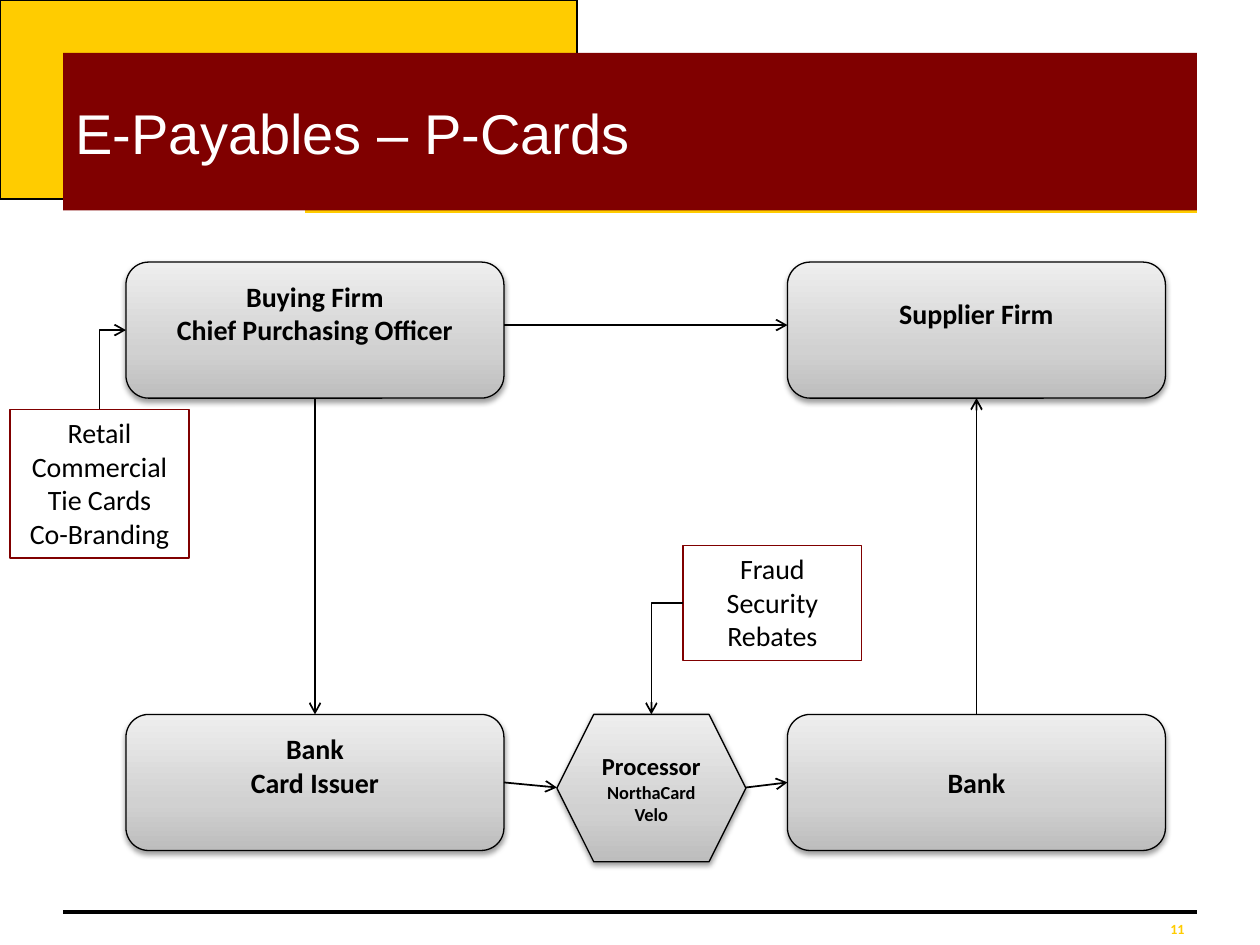
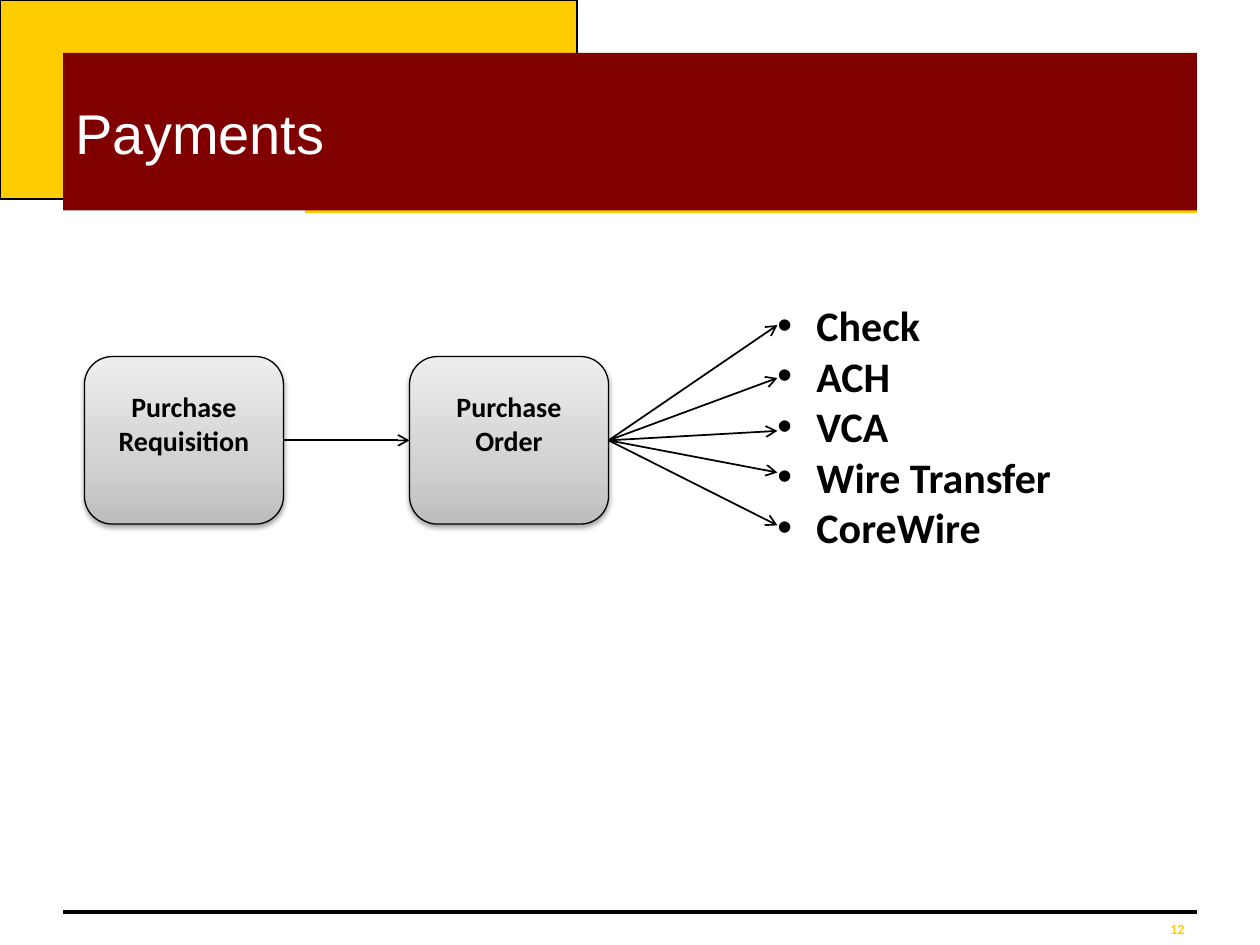
from lxml import etree
from pptx import Presentation
from pptx.dml.color import RGBColor
from pptx.enum.shapes import MSO_CONNECTOR, MSO_SHAPE
from pptx.enum.text import MSO_ANCHOR, MSO_AUTO_SIZE, PP_ALIGN
from pptx.oxml.ns import qn
from pptx.util import Inches, Pt

STRAIGHT, ELBOW = MSO_CONNECTOR.STRAIGHT, MSO_CONNECTOR.ELBOW
RECTANGLE, HEXAGON = MSO_SHAPE.RECTANGLE, MSO_SHAPE.HEXAGON
ROUNDED = MSO_SHAPE.ROUNDED_RECTANGLE
MIDDLE = MSO_ANCHOR.MIDDLE
NO_AUTOFIT = MSO_AUTO_SIZE.NONE
LEFT, CENTER, RIGHT = PP_ALIGN.LEFT, PP_ALIGN.CENTER, PP_ALIGN.RIGHT
TOP_SIDE, LEFT_SIDE, BOTTOM_SIDE, RIGHT_SIDE = range(4)

GOLD, MAROON, BLACK, WHITE = "FFCC00", "800000", "000000", "FFFFFF"
GRAY_STOPS = [(0, "BDBDBD"), (35, "D1D1D1"), (100, "EEEEEE")]
HEADING_FONT, BODY_FONT = "Arial", "Calibri"
TITLE_ONLY_LAYOUT, TITLE_AND_BODY_LAYOUT = 5, 1


def color(value):
    return RGBColor.from_string(value)


def place(shape, left, top, width, height):
    shape.left, shape.top = Inches(left), Inches(top)
    shape.width, shape.height = Inches(width), Inches(height)


def set_line(shape, line_color, width):
    shape.line.color.rgb = color(line_color)
    shape.line.width = Pt(width)


def write(paragraph, text, size, font=BODY_FONT, text_color=BLACK, bold=False,
          alignment=CENTER):
    paragraph.alignment = alignment
    run = paragraph.add_run()
    run.text = text
    run.font.name = font
    run.font.size = Pt(size)
    run.font.bold = bold
    run.font.color.rgb = color(text_color)


def write_lines(frame, lines, bold):
    frame.word_wrap = True
    for index, (text, size) in enumerate(lines):
        paragraph = frame.add_paragraph() if index else frame.paragraphs[0]
        write(paragraph, text, size, bold=bold)


def add_line(slide, start, end, line_color=BLACK, width=1, kind=STRAIGHT):
    points = [Inches(value) for value in (*start, *end)]
    connector = slide.shapes.add_connector(kind, *points)
    set_line(connector, line_color, width)
    etree.SubElement(connector.element.spPr, qn("a:effectLst"))
    return connector


def add_arrow(slide, start, end, source=None, target=None, kind=STRAIGHT,
              arrow_end="a:tailEnd"):
    connector = add_line(slide, start, end, kind=kind)
    if source:
        connector.begin_connect(*source)
    if target:
        connector.end_connect(*target)
    if kind == ELBOW:
        geometry = connector.element.spPr.find(qn("a:prstGeom"))
        geometry.set("prst", "bentConnector2")
    line = connector.element.spPr.find(qn("a:ln"))
    etree.SubElement(line, qn(arrow_end), type="arrow")
    return connector


def set_gray_gradient(shape):
    shape.fill.gradient()
    shape.fill.gradient_angle = 90
    stops = next(shape.element.iter(qn("a:gsLst")))
    stops.clear()
    for position, stop_color in GRAY_STOPS:
        stop = etree.SubElement(stops, qn("a:gs"), pos=str(position * 1000))
        etree.SubElement(stop, qn("a:srgbClr"), val=stop_color)


def set_soft_shadow(shape):
    shape.shadow.inherit = False
    effects = shape.element.spPr.find(qn("a:effectLst"))
    shadow = etree.SubElement(effects, qn("a:outerShdw"), blurRad="40000",
                              dist="20000", dir="5400000", rotWithShape="0")
    shadow_color = etree.SubElement(shadow, qn("a:srgbClr"), val=BLACK)
    etree.SubElement(shadow_color, qn("a:alpha"), val="38000")


def add_party(slide, box, lines, kind=ROUNDED, raised=True):
    shape = slide.shapes.add_shape(kind, *map(Inches, box))
    set_gray_gradient(shape)
    set_line(shape, BLACK, 0.75)
    set_soft_shadow(shape)
    frame = shape.text_frame
    frame.vertical_anchor = MIDDLE
    if raised:
        frame.margin_bottom = Inches(0.32)
    write_lines(frame, lines, True)
    return shape


def add_note(slide, box, texts):
    note = slide.shapes.add_textbox(*map(Inches, box))
    set_line(note, MAROON, 0.75)
    write_lines(note.text_frame, [(text, 16) for text in texts], False)
    return note


def fill_bullets(body, box, texts):
    place(body, *box)
    frame = body.text_frame
    frame.auto_size = NO_AUTOFIT
    frame.vertical_anchor = MIDDLE
    frame.margin_left = Inches(0.25)
    frame.margin_bottom = Inches(0.45)
    for index, text in enumerate(texts):
        paragraph = frame.add_paragraph() if index else frame.paragraphs[0]
        properties = paragraph._p.get_or_add_pPr()
        properties.set("marL", str(Inches(0.31)))
        properties.set("indent", str(Inches(-0.31)))
        etree.SubElement(properties, qn("a:buFont"), typeface=HEADING_FONT)
        etree.SubElement(properties, qn("a:buChar"), char="•")
        paragraph.space_before = Pt(0)
        write(paragraph, text, 24, bold=True, alignment=LEFT)


def add_slide(presentation, layout, title_text, number):
    slide = presentation.slides.add_slide(presentation.slide_layouts[layout])
    add_line(slide, (0.5, 7.24), (9.5, 7.24), width=2)
    corner = slide.shapes.add_shape(RECTANGLE, 0, 0, Inches(4.58), Inches(1.58))
    corner.shadow.inherit = False
    corner.fill.solid()
    corner.fill.fore_color.rgb = color(GOLD)
    set_line(corner, BLACK, 1)
    footer = slide.shapes.add_textbox(*map(Inches, (0.5, 7.26, 9, 0.23)))
    footer.text_frame.word_wrap = True
    write(footer.text_frame.paragraphs[0], str(number), 8, text_color=GOLD,
          bold=True, alignment=RIGHT)
    add_line(slide, (2.42, 1.67), (9.5, 1.67), GOLD, 3)

    title = slide.shapes.title
    title.element.getparent().append(title.element)
    place(title, 0.5, 0.42, 9, 1.25)
    title.fill.solid()
    title.fill.fore_color.rgb = color(MAROON)
    title.text_frame.auto_size = NO_AUTOFIT
    title.text_frame.vertical_anchor = MIDDLE
    write(title.text_frame.paragraphs[0], title_text, 32, HEADING_FONT, WHITE,
          alignment=LEFT)
    return slide


def build_purchasing_cards(presentation):
    slide = add_slide(presentation, TITLE_ONLY_LAYOUT, "E-Payables – P-Cards", 11)
    buyer_left, supplier_left = 1, 6.25
    firm_top, bank_top = 2.08, 5.67
    size = (3, 1.08)
    card_types = add_note(slide, (0.08, 3.25, 1.42, 1.18),
                          ["Retail", "Commercial", "Tie Cards", "Co-Branding"])
    buyer = add_party(slide, (buyer_left, firm_top, *size),
                      [("Buying Firm", 16), ("Chief Purchasing Officer", 16)])
    supplier = add_party(slide, (supplier_left, firm_top, *size),
                         [("Supplier Firm", 16)])
    issuer = add_party(slide, (buyer_left, bank_top, *size),
                       [("Bank", 16), ("Card Issuer", 16)])
    bank = add_party(slide, (supplier_left, bank_top, *size), [("Bank", 16)],
                     raised=False)
    add_party(slide, (4.42, bank_top, 1.5, 1.17),
              [("Processor", 14), ("NorthaCard", 10.5), ("Velo", 10.5)],
              HEXAGON, raised=False)
    concerns = add_note(slide, (5.42, 4.33, 1.42, 0.91),
                        ["Fraud", "Security", "Rebates"])

    add_arrow(slide, (4, 2.58), (6.25, 2.58))
    add_arrow(slide, (2.5, 3.16), (2.5, 5.67),
              (buyer, BOTTOM_SIDE), (issuer, TOP_SIDE))
    add_arrow(slide, (7.75, 5.67), (7.75, 3.16),
              (bank, TOP_SIDE), (supplier, BOTTOM_SIDE))
    add_arrow(slide, (4, 6.21), (4.42, 6.25), source=(issuer, RIGHT_SIDE))
    add_arrow(slide, (5.92, 6.25), (6.25, 6.21), target=(bank, LEFT_SIDE))
    add_arrow(slide, (1, 2.62), (0.79, 3.25), (buyer, LEFT_SIDE),
              (card_types, TOP_SIDE), ELBOW, "a:headEnd")
    add_arrow(slide, (5.42, 4.79), (5.17, 5.67), (concerns, LEFT_SIDE), kind=ELBOW)


def build_payments(presentation):
    slide = add_slide(presentation, TITLE_AND_BODY_LAYOUT, "Payments", 12)
    size = (1.58, 1.33)
    requisition = add_party(slide, (0.67, 2.83, *size),
                            [("Purchase", 16), ("Requisition", 16)])
    order = add_party(slide, (3.25, 2.83, *size),
                      [("Purchase", 16), ("Order", 16)])
    fill_bullets(slide.placeholders[1], (5.92, 2.08, 3.33, 3),
                 ["Check", "ACH", "VCA", "Wire Transfer", "CoreWire"])
    for method_y in (2.58, 3, 3.42, 3.75, 4.17):
        add_arrow(slide, (4.83, 3.5), (6.17, method_y), (order, RIGHT_SIDE))
    add_arrow(slide, (2.25, 3.5), (3.25, 3.5),
              (requisition, RIGHT_SIDE), (order, LEFT_SIDE))


def main():
    presentation = Presentation()
    presentation.slide_width = Inches(10)
    presentation.slide_height = Inches(7.5)
    build_purchasing_cards(presentation)
    build_payments(presentation)
    presentation.save("out.pptx")


if __name__ == "__main__":
    main()
